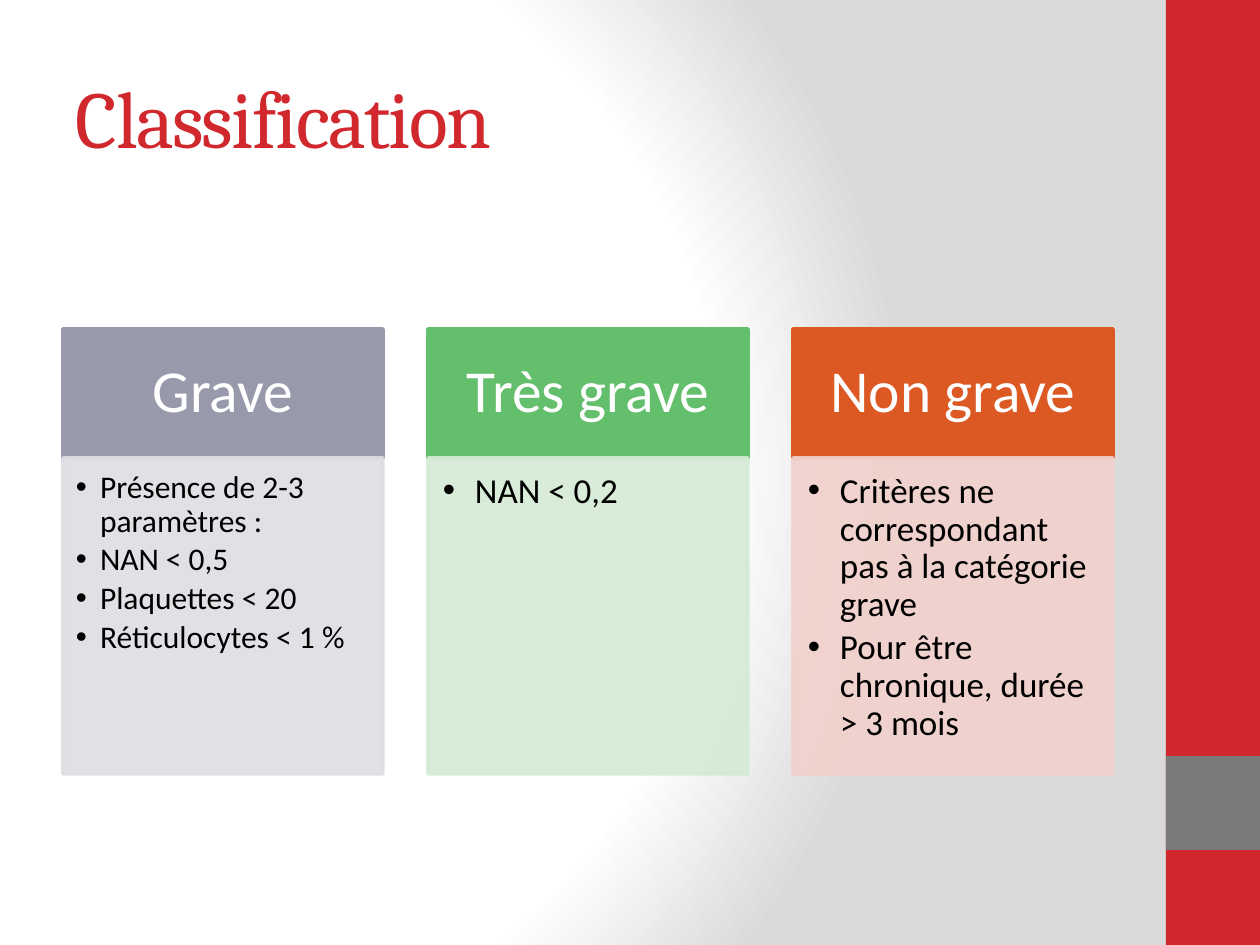
import dataclasses

import lxml.etree
import pptx
import pptx.dml.color
import pptx.enum.shapes
import pptx.enum.text
import pptx.oxml
import pptx.oxml.ns
import pptx.util

ANCHOR = pptx.enum.text.MSO_ANCHOR
ALIGN = pptx.enum.text.PP_ALIGN
qn = pptx.oxml.ns.qn
PX = 914400 / 126


def px(n):
    return pptx.util.Emu(round(n * PX))


def rgb(color):
    return pptx.dml.color.RGBColor.from_string(color)


@dataclasses.dataclass(frozen=True)
class Theme:
    red: str = "D1282E"
    gray: str = "7A7A7A"
    white: str = "FFFFFF"
    black: str = "000000"
    edge: str = "DADADA"
    grave: tuple = ("989AAC", "DDDEE3")
    very_grave: tuple = ("63BF6C", "D5EAD5")
    not_grave: tuple = ("DC5924", "F2D1CC")
    heading: str = "Cambria"
    body: str = "Calibri"
    title_size: int = 46
    header_size: int = 34
    small_size: int = 18
    large_size: int = 20


def write(tf, text, *, font, size, color, align=ALIGN.LEFT, anchor=ANCHOR.TOP,
          insets=(13, 6, 13, 6), line=None, after=0, indent=0, tracking=0):
    tf.word_wrap = True
    tf.vertical_anchor = anchor
    tf.margin_left, tf.margin_top, tf.margin_right, tf.margin_bottom = map(px, insets)
    for i, item in enumerate(text.split("\n")):
        p = tf.paragraphs[0] if i == 0 else tf.add_paragraph()
        p.alignment = align
        p.line_spacing = line
        p.space_after = pptx.util.Pt(after)
        if indent:
            pPr = p._p.get_or_add_pPr()
            pPr.set("marL", str(px(indent)))
            pPr.set("indent", str(-px(indent)))
            lxml.etree.SubElement(pPr, qn("a:buFont")).set("typeface", "Arial")
            lxml.etree.SubElement(pPr, qn("a:buChar")).set("char", "•")
        r = p.add_run()
        r.text = item
        r.font.name = font
        r.font.size = pptx.util.Pt(size)
        r.font.color.rgb = rgb(color)
        if tracking:
            r._r.get_or_add_rPr().set("spc", str(tracking * 100))


class Deck:
    def __init__(self, theme):
        self.theme = theme
        self.prs = pptx.Presentation()
        self.prs.slide_width, self.prs.slide_height = px(1260), px(945)
        self.s = self.prs.slides.add_slide(self.prs.slide_layouts[6])

    def background(self, stops, center):
        self.s.background.fill.gradient()
        grad = self.s.element.find(".//" + qn("a:gradFill"))
        for child in list(grad):
            grad.remove(child)
        gs_list = lxml.etree.SubElement(grad, qn("a:gsLst"))
        for pos, color in stops:
            gs = lxml.etree.SubElement(gs_list, qn("a:gs"), pos=str(pos * 1000))
            lxml.etree.SubElement(gs, qn("a:srgbClr"), val=color)
        path = lxml.etree.SubElement(grad, qn("a:path"))
        path.set("path", "circle")
        rect = lxml.etree.SubElement(path, qn("a:fillToRect"))
        for side, value in zip("ltrb", center):
            rect.set(side, str(value * 1000))

    def text(self, x, y, w, h, text, **style):
        sp = self.s.shapes.add_textbox(px(x), px(y), px(w), px(h))
        write(sp.text_frame, text, **style)

    def rect(self, x, y, w, h, color, outline=0, alpha=100):
        sp = self.s.shapes.add_shape(
            pptx.enum.shapes.MSO_SHAPE.RECTANGLE, px(x), px(y), px(w), px(h))
        sp.shadow.inherit = False
        sp.fill.solid()
        sp.fill.fore_color.rgb = rgb(color)
        if outline:
            sp.line.color.rgb = rgb(color)
            sp.line.width = pptx.util.Pt(outline)
        else:
            sp.line.fill.background()
        if alpha < 100:
            for clr in sp._element.spPr.iter(qn("a:srgbClr")):
                lxml.etree.SubElement(clr, qn("a:alpha"), val=str(alpha * 1000))
        return sp

    def card(self, x, y, w, header_h, body_h, colors, header, items, size, indent, insets):
        t = self.theme
        sp = self.rect(x, y, w, header_h, colors[0], outline=2)
        write(sp.text_frame, header, font=t.body, size=t.header_size, color=t.white,
              align=ALIGN.CENTER, anchor=ANCHOR.MIDDLE, insets=(33, 19, 33, 19), line=0.9)
        sp = self.rect(x, y + header_h, w, body_h, colors[1], outline=2, alpha=90)
        write(sp.text_frame, items, font=t.body, size=size, color=t.black,
              insets=insets, line=0.9, after=size * 0.15, indent=indent)


def main():
    t = Theme()
    deck = Deck(t)
    deck.background([(0, t.white), (75, t.white), (100, t.edge)], (20, 50, 100, 50))
    deck.rect(1166, 0, 94, 945, t.red)
    deck.rect(1166, 756, 94, 94, t.gray)
    deck.text(63, 38, 1050, 157, "Classification", font=t.heading, size=t.title_size,
              color=t.red, anchor=ANCHOR.MIDDLE, tracking=-1)

    small = (t.small_size, 24, (13, 13, 18, 20))
    large = (t.large_size, 32, (15, 15, 20, 21))
    cards = [
        (t.grave, "Grave",
         "Présence de 2-3 paramètres :\nNAN < 0,5\nPlaquettes < 20\nRéticulocytes < 1 %", small),
        (t.very_grave, "Très grave", "NAN < 0,2", large),
        (t.not_grave, "Non grave",
         "Critères ne correspondant pas à la catégorie grave\n"
         "Pour être chronique, durée > 3 mois", large),
    ]
    for i, (colors, header, items, layout) in enumerate(cards):
        deck.card(63 + 365 * i, 329, 320, 129, 316, colors, header, items, *layout)
    deck.prs.save("out.pptx")


if __name__ == "__main__":
    main()
